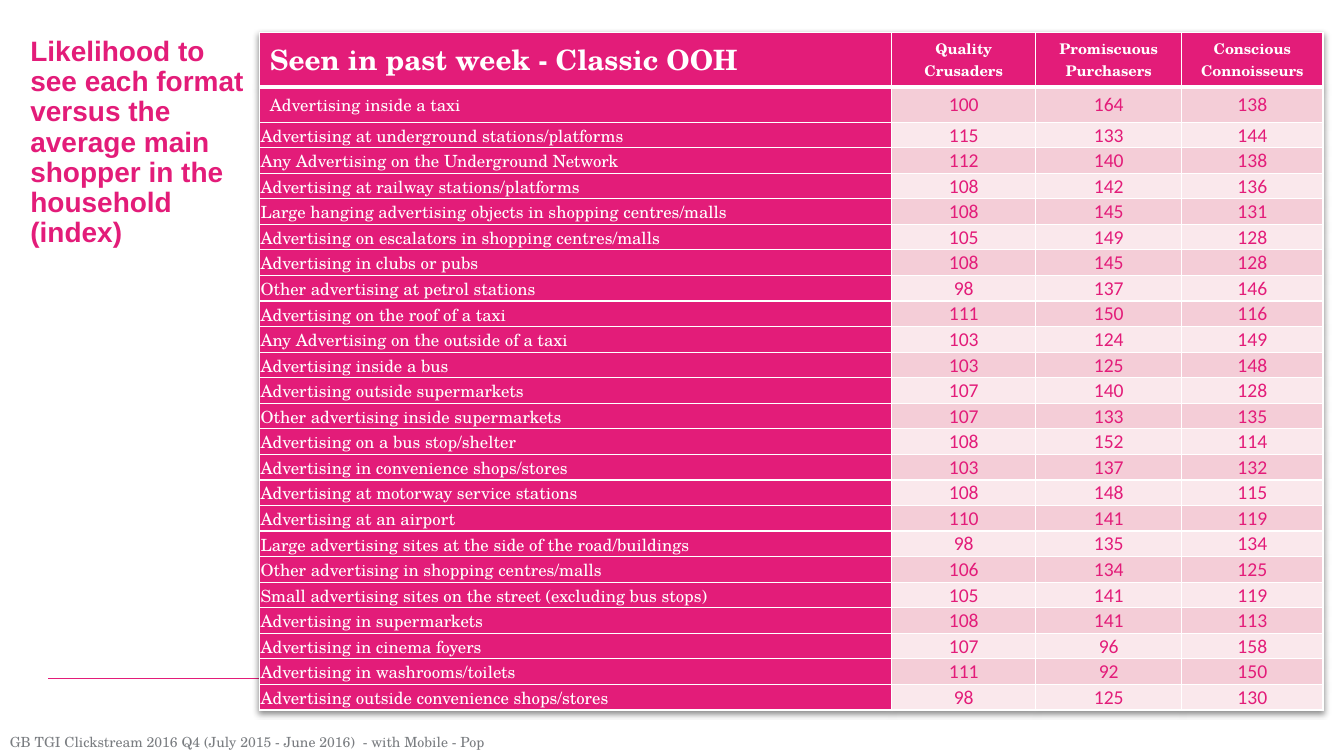
from lxml import etree
from pptx import Presentation
from pptx import util as u
from pptx.dml.color import RGBColor
from pptx.enum import shapes, text
from pptx.oxml import ns

PINK, WHITE, GREY = "E31C79", "FFFFFF", "7A7D81"
BANDS = ("F4CDD7", "FAE8EC")
SERIF = "TeX Gyre Schola"
LEFT, CENTER = text.PP_ALIGN.LEFT, text.PP_ALIGN.CENTER

HEADERS = ("Seen in past week - Classic OOH", "Quality Crusaders",
           "Promiscuous Purchasers", "Conscious Connoisseurs")
ROWS = (
    ("Advertising inside a taxi", 100, 164, 138),
    ("Advertising at underground stations/platforms", 115, 133, 144),
    ("Any Advertising on the Underground Network", 112, 140, 138),
    ("Advertising at railway stations/platforms", 108, 142, 136),
    ("Large hanging advertising objects in shopping centres/malls", 108, 145, 131),
    ("Advertising on escalators in shopping centres/malls", 105, 149, 128),
    ("Advertising in clubs or pubs", 108, 145, 128),
    ("Other advertising at petrol stations", 98, 137, 146),
    ("Advertising on the roof of a taxi", 111, 150, 116),
    ("Any Advertising on the outside of a taxi", 103, 124, 149),
    ("Advertising inside a bus", 103, 125, 148),
    ("Advertising outside supermarkets", 107, 140, 128),
    ("Other advertising inside supermarkets", 107, 133, 135),
    ("Advertising on a bus stop/shelter", 108, 152, 114),
    ("Advertising in convenience shops/stores", 103, 137, 132),
    ("Advertising at motorway service stations", 108, 148, 115),
    ("Advertising at an airport", 110, 141, 119),
    ("Large advertising sites at the side of the road/buildings", 98, 135, 134),
    ("Other advertising in shopping centres/malls", 106, 134, 125),
    ("Small advertising sites on the street (excluding bus stops)", 105, 141, 119),
    ("Advertising in supermarkets", 108, 141, 113),
    ("Advertising in cinema foyers", 107, 96, 158),
    ("Advertising in washrooms/toilets", 111, 92, 150),
    ("Advertising outside convenience shops/stores", 98, 125, 130),
)


def color(hex_value):
    return RGBColor.from_string(hex_value)


def set_all(obj, values):
    for name, value in values.items():
        setattr(obj, name, value)


class Deck:
    """Holds the style and the current slide."""

    def __init__(self, width, height):
        self.prs = Presentation()
        set_all(self.prs, {"slide_width": u.Cm(width), "slide_height": u.Cm(height)})
        self.s = self.prs.slides.add_slide(self.prs.slide_layouts[5])

    def add_text(self, p, words, size, font, hex_value, bold=False, align=LEFT):
        p.alignment = align
        r = p.add_run()
        r.text = words
        set_all(r.font, {"size": u.Pt(size), "name": font, "bold": bold})
        r.font.color.rgb = color(hex_value)

    def title(self, box, lines):
        sp = self.s.shapes.title
        set_all(sp, dict(zip(("left", "top", "width", "height"), map(u.Cm, box))))
        tf = sp.text_frame
        set_all(tf, {"word_wrap": True, "auto_size": text.MSO_AUTO_SIZE.NONE,
                     "vertical_anchor": text.MSO_ANCHOR.TOP})
        for i, line in enumerate(lines):
            p = tf.add_paragraph() if i else tf.paragraphs[0]
            set_all(p, {"line_spacing": 0.9, "space_before": u.Pt(0)})
            self.add_text(p, line, 20, "Arial", PINK, bold=True)

    def textbox(self, box, words):
        tf = self.s.shapes.add_textbox(*map(u.Cm, box)).text_frame
        set_all(tf, {"word_wrap": True, "auto_size": text.MSO_AUTO_SIZE.SHAPE_TO_FIT_TEXT})
        self.add_text(tf.paragraphs[0], words, 10, SERIF, GREY)

    def rule(self, x1, x2, y):
        line = self.s.shapes.add_connector(
            shapes.MSO_CONNECTOR.STRAIGHT, *map(u.Cm, (x1, y, x2, y)))
        line.line.color.rgb = color(PINK)
        line.line.width = u.Pt(1)
        etree.SubElement(line._element.spPr, ns.qn("a:effectLst"))

    def borders(self, cell, top=1, bottom=1):
        tc_pr = cell._tc.get_or_add_tcPr()
        widths = {"lnL": 1, "lnR": 1, "lnT": top, "lnB": bottom}
        for i, (tag, width) in enumerate(widths.items()):
            ln = etree.Element(ns.qn("a:" + tag), w=str(u.Pt(width)))
            fill = etree.SubElement(ln, ns.qn("a:solidFill"))
            etree.SubElement(fill, ns.qn("a:srgbClr"), val=WHITE)
            tc_pr.insert(i, ln)

    def table_shadow(self, table):
        effects = etree.Element(ns.qn("a:effectLst"))
        shadow = etree.SubElement(effects, ns.qn("a:outerShdw"), blurRad="50800",
                                  dist="25400", dir="5400000", rotWithShape="0")
        black = etree.SubElement(shadow, ns.qn("a:srgbClr"), val="000000")
        etree.SubElement(black, ns.qn("a:alpha"), val="45000")
        table._tbl.tblPr.insert(0, effects)

    def cell(self, cell, row, col, value):
        cell.fill.solid()
        cell.fill.fore_color.rgb = color(PINK if row == 0 or col == 0 else BANDS[(row - 1) % 2])
        self.borders(cell, top=3 if row == 1 else 1, bottom=3 if row == 0 else 1)
        # The header row and the first label keep the default margins
        if row > 1 or (row == 1 and col):
            edge = u.Cm(0.02)
            set_all(cell, {"vertical_anchor": text.MSO_ANCHOR.MIDDLE, "margin_left": edge,
                           "margin_right": edge, "margin_top": edge, "margin_bottom": 0})
        if row == 0:
            style = (10.5 if col else 20, SERIF, WHITE, True)
        else:
            style = (14, "Calibri", PINK) if col else (12, SERIF, WHITE)
        self.add_text(cell.text_frame.paragraphs[0], str(value), *style,
                      align=CENTER if col else LEFT)

    def table(self, box, widths, heights, rows):
        frame = self.s.shapes.add_table(len(rows), len(widths), *map(u.Cm, box))
        table = frame.table
        for column, width in zip(table.columns, widths):
            column.width = u.Cm(width)
        for row, height in zip(table.rows, heights):
            row.height = u.Cm(height)
        frame.height = u.Cm(box[3])
        self.table_shadow(table)
        for i, values in enumerate(rows):
            for j, value in enumerate(values):
                self.cell(table.cell(i, j), i, j, value)


def main():
    deck = Deck(33.88, 19.05)

    # Rule behind the table
    deck.rule(1.22, 32.69, 17.09)

    # Index table
    heights = [1.04, 0.69] + [0.58] * (len(ROWS) - 1)
    deck.table((6.55, 0.81, 26.8, 16.15), (15.93, 3.63, 3.68, 3.56),
               heights, (HEADERS,) + ROWS)

    # Title and source
    deck.title((0.51, 0.81, 6.05, 1.7),
               ("Likelihood to see each format versus the average main shopper in the household",
                "(index)"))
    deck.textbox((0, 18.36, 16.94, 0.69),
                 "GB TGI Clickstream 2016 Q4 (July 2015 - June 2016)  - with Mobile - Pop")

    deck.prs.save("out.pptx")


if __name__ == "__main__":
    main()
